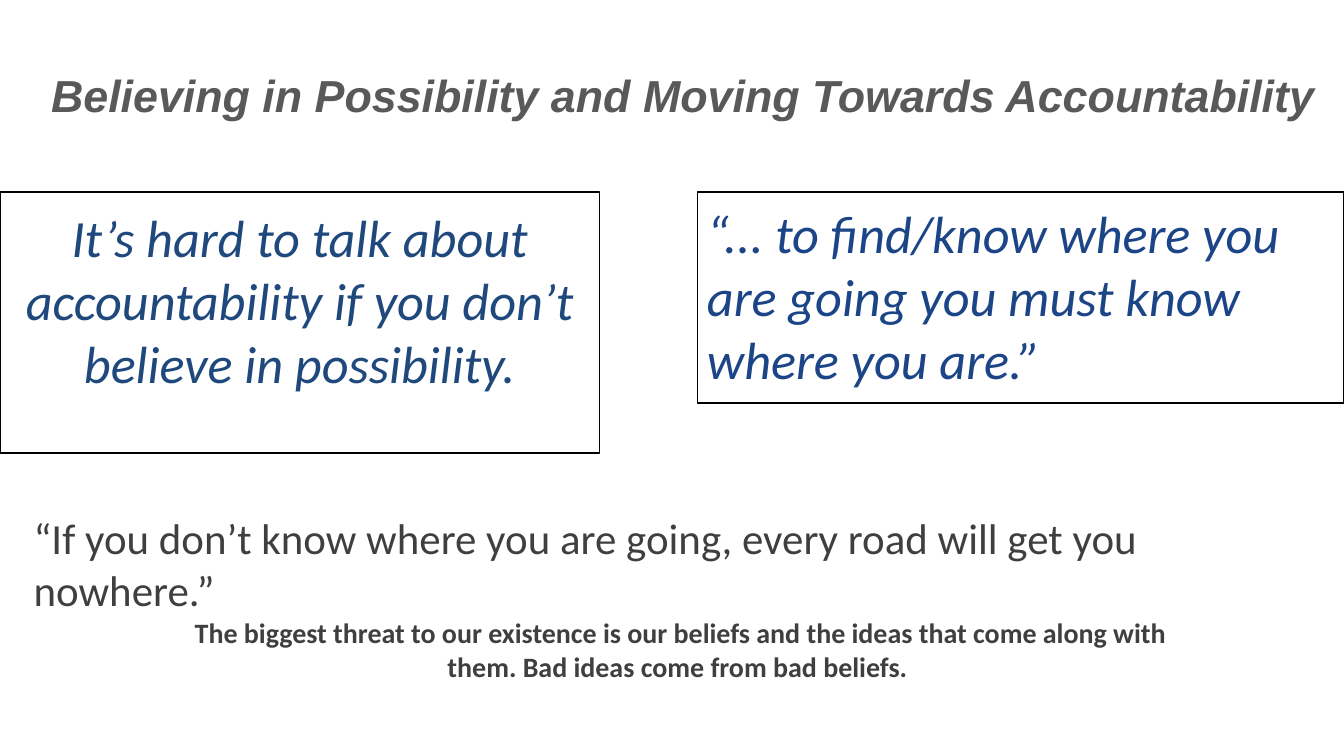
from dataclasses import dataclass

from pptx import Presentation
from pptx.dml.color import RGBColor
from pptx.enum.shapes import MSO_SHAPE
from pptx.enum.text import MSO_ANCHOR, PP_ALIGN
from pptx.slide import Slide
from pptx.util import Inches, Pt


@dataclass(frozen=True)
class Statement:
    text: str
    left: float
    top: float
    width: float
    height: float
    size: int
    color: str
    font: str = "Calibri"
    bold: bool = False
    italic: bool = False
    centered: bool = False
    framed: bool = False
    inset: float = 0.07
    indent: float = 0
    space_before: int = 0


STATEMENTS = [
    Statement("It’s hard to talk about accountability if you don’t believe in possibility.",
              0, 1.43, 4.46, 1.94, 28, "1F497D",
              italic=True, centered=True, framed=True, inset=0.1),
    Statement("Believing in Possibility and Moving Towards Accountability",
              0.18, 0.4, 10.16, 0.61, 24, "595959", font="Arial",
              bold=True, italic=True, inset=0.1, indent=0.1, space_before=3),
    Statement("The biggest threat to our existence is our beliefs and the ideas "
              "that come along with them. Bad ideas come from bad beliefs. ",
              1.12, 4.51, 7.89, 0.71, 15, "3F3F3F", bold=True, centered=True),
    Statement("“... to find/know where you are going you must know where you are.”",
              5.19, 1.43, 4.81, 1.57, 28, "1C4587", italic=True, framed=True),
    Statement("“If you don’t know where you are going, every road will get you nowhere.”",
              0.18, 3.74, 9.7, 0.93, 23, "3F3F3F"),
]


def rgb(color: str) -> RGBColor:
    return RGBColor.from_string(color)


def draw_statement(slide: Slide, statement: Statement) -> None:
    bounds = [Inches(length) for length in
              (statement.left, statement.top, statement.width, statement.height)]
    if statement.framed:
        box = slide.shapes.add_shape(MSO_SHAPE.RECTANGLE, *bounds)
        box.shadow.inherit = False
        box.fill.background()
        box.line.color.rgb = rgb("000000")
        box.line.width = Pt(0.75)
    else:
        box = slide.shapes.add_textbox(*bounds)

    frame = box.text_frame
    frame.text = statement.text
    frame.word_wrap = True
    frame.vertical_anchor = MSO_ANCHOR.TOP
    frame.margin_left = Inches(statement.inset + statement.indent)
    frame.margin_top = frame.margin_right = frame.margin_bottom = Inches(statement.inset)

    paragraph = frame.paragraphs[0]
    paragraph.alignment = PP_ALIGN.CENTER if statement.centered else PP_ALIGN.LEFT
    paragraph.space_before = Pt(statement.space_before)
    font = paragraph.runs[0].font
    font.name = statement.font
    font.size = Pt(statement.size)
    font.bold = statement.bold
    font.italic = statement.italic
    font.color.rgb = rgb(statement.color)


def main() -> None:
    presentation = Presentation()
    presentation.slide_width = Inches(10)
    presentation.slide_height = Inches(10) * 9 // 16
    slide = presentation.slides.add_slide(presentation.slide_layouts[6])
    for statement in STATEMENTS:
        draw_statement(slide, statement)
    presentation.save("out.pptx")


if __name__ == "__main__":
    main()
